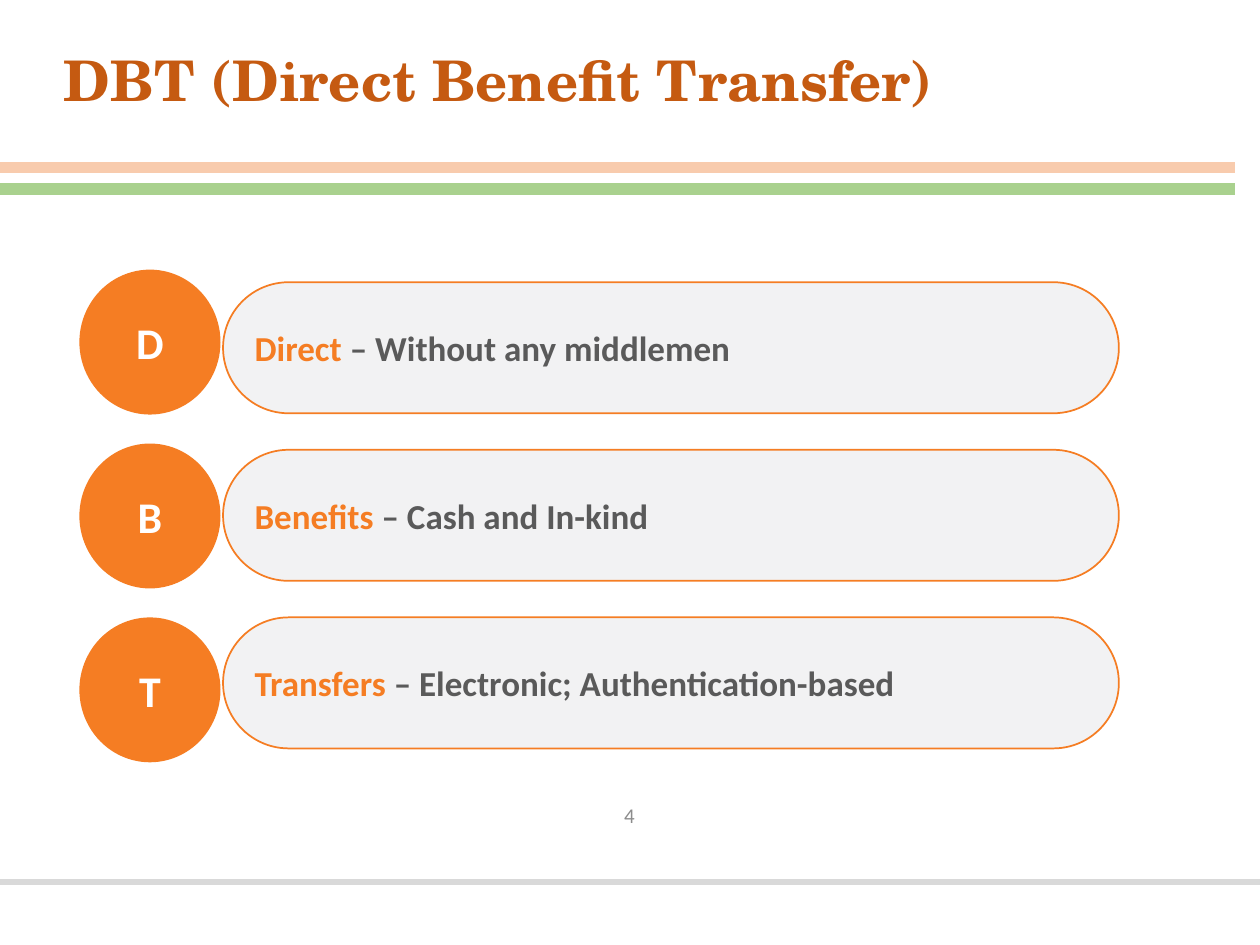
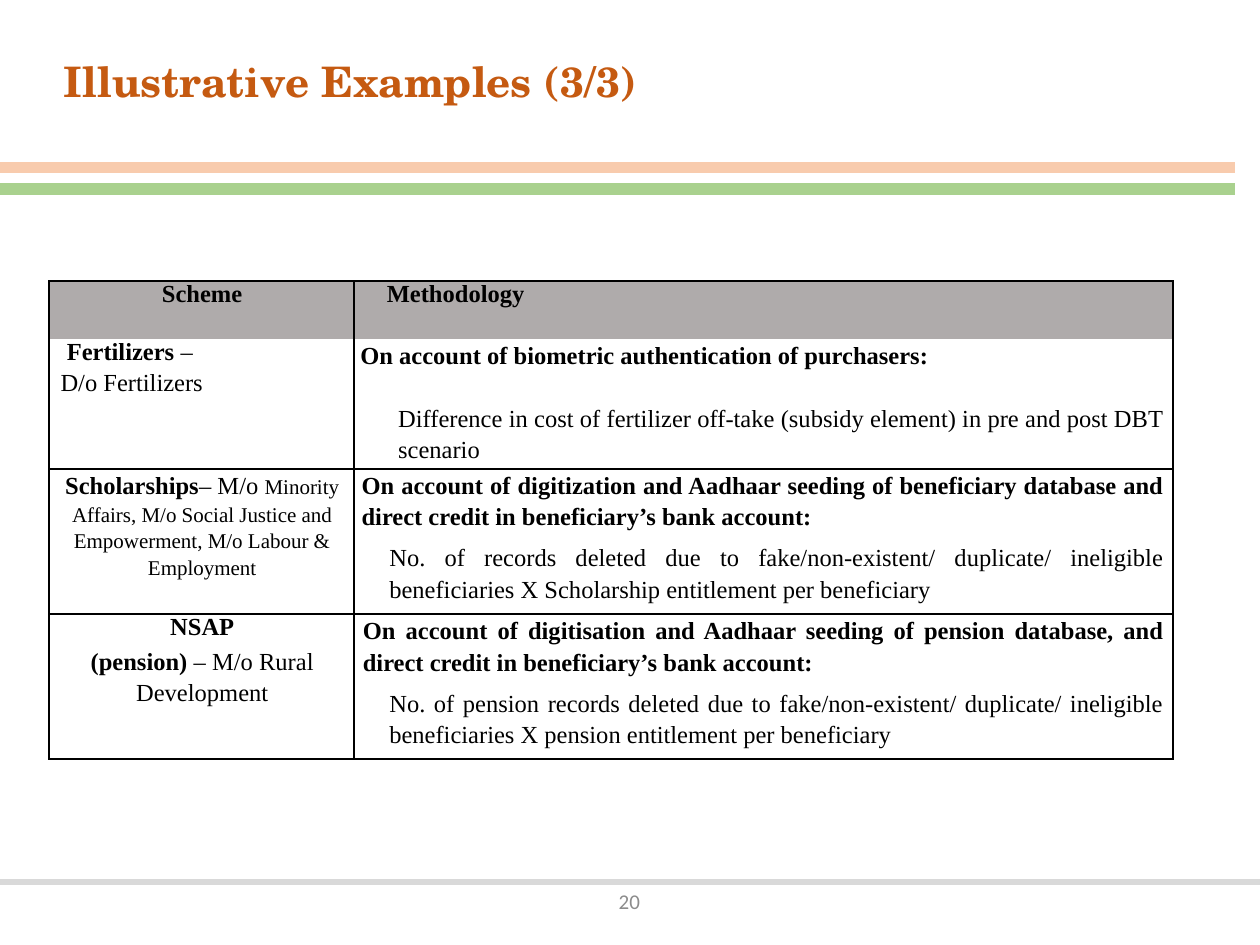
from lxml import etree
from pptx import Presentation
from pptx.dml.color import RGBColor
from pptx.enum.shapes import MSO_CONNECTOR, MSO_SHAPE
from pptx.enum.text import MSO_ANCHOR, PP_ALIGN
from pptx.oxml.ns import qn
from pptx.util import Inches, Pt

LEFT, CENTER, JUSTIFY = PP_ALIGN.LEFT, PP_ALIGN.CENTER, PP_ALIGN.JUSTIFY
MIDDLE = MSO_ANCHOR.MIDDLE
STRAIGHT = MSO_CONNECTOR.STRAIGHT
ELLIPSE, ROUNDED = MSO_SHAPE.OVAL, MSO_SHAPE.ROUNDED_RECTANGLE

PEACH, GREEN, SILVER = "F8CBAD", "A9D18E", "D9D9D9"
RUST, ORANGE, WHITE = "C55A11", "F57D23", "FFFFFF"
PALE, CHARCOAL, GRAY = "E6E7E8", "5A5A5A", "8C8C8C"
BLACK, HEADER_GRAY = "000000", "AFABAB"
TITLE_FONT, BODY_FONT, TABLE_FONT = "TeX Gyre Schola", "Calibri", "Times New Roman"


def color(value):
    return RGBColor.from_string(value)


def style_text(frame, text, font, size, value, bold=False, align=LEFT):
    frame.word_wrap = True
    frame.vertical_anchor = MIDDLE
    para = frame.paragraphs[0]
    para.alignment = align
    para.font.name = font
    para.font.size = Pt(size)
    para.font.bold = bold
    para.font.color.rgb = color(value)
    para.add_run().text = text
    return para


deck = Presentation()
deck.slide_width, deck.slide_height = Inches(10), Inches(7.5)

RULES = [(1.33, 9.8, PEACH, 6.75), (1.5, 9.8, GREEN, 6.75), (7, 10, SILVER, 3)]
PAGES = [
    ("DBT (Direct Benefit Transfer)", 32, "4", 6.27),
    ("Illustrative Examples (3/3)", 24, "20", 6.95),
]
pages = []
for title, title_size, number, number_top in PAGES:
    page = deck.slides.add_slide(deck.slide_layouts[6])
    pages.append(page)
    for top, right, value, width in RULES:
        rule = page.shapes.add_connector(
            STRAIGHT, Inches(0), Inches(top), Inches(right), Inches(top))
        rule.line.color.rgb = color(value)
        rule.line.width = Pt(width)
        etree.SubElement(rule._element.spPr, qn("a:effectLst"))
    box = page.shapes.add_textbox(Inches(0.41), Inches(0.36), Inches(9.24), Inches(0.61))
    para = style_text(box.text_frame, title, TITLE_FONT, title_size, RUST, True)
    para.line_spacing = 0.9
    box = page.shapes.add_textbox(
        Inches(3.87), Inches(number_top), Inches(2.25), Inches(0.4))
    style_text(box.text_frame, number, BODY_FONT, 12, GRAY, align=CENTER)

dbt_page, examples_page = pages

MEANINGS = [
    ("Direct ", "– Without any middlemen"),
    ("Benefits ", "– Cash and In-kind"),
    ("Transfers ", "– Electronic; Authentication-based"),
]
for index, (word, meaning) in enumerate(MEANINGS):
    pill = dbt_page.shapes.add_shape(
        ROUNDED, Inches(1.77), Inches(2.24 + 1.33 * index), Inches(7.11), Inches(1.04))
    pill.adjustments[0] = 0.5
    pill.shadow.inherit = False
    pill.fill.solid()
    pill.fill.fore_color.rgb = color(PALE)
    fill_color = pill._element.spPr.find(qn("a:solidFill"))[0]
    etree.SubElement(fill_color, qn("a:alpha"), val="50000")
    pill.line.color.rgb = color(ORANGE)
    pill.line.width = Pt(1)
    para = style_text(pill.text_frame, word, BODY_FONT, 20, ORANGE, True)
    span = para.add_run()
    span.text = meaning
    span.font.color.rgb = color(CHARCOAL)

    circle = dbt_page.shapes.add_shape(
        ELLIPSE, Inches(0.63), Inches(2.14 + 1.38 * index), Inches(1.12), Inches(1.15))
    circle.shadow.inherit = False
    circle.fill.solid()
    circle.fill.fore_color.rgb = color(ORANGE)
    circle.line.fill.background()
    style_text(circle.text_frame, word[0], BODY_FONT, 25, WHITE, True, CENTER)

SCHEMES = [
    [
        [(CENTER, 0.06, 1, 0, [("Scheme", True, 14)])],
        [(LEFT, 0.26, 1, 0, [("Methodology", True, 14)])],
    ],
    [
        [(LEFT, 0.14, 1, 0, [("Fertilizers ", True, 14), ("–", False, 14)]),
         (LEFT, 0.09, 1, 2, [("D/o Fertilizers", False, 14)])],
        [(LEFT, 0.05, 1.15, 0,
          [("On account of biometric authentication of purchasers:", True, 14)])],
    ],
    [
        [],
        [(JUSTIFY, 0.35, 1.15, 0,
          [("Difference in cost of fertilizer off-take (subsidy element) in pre and "
            "post DBT scenario", False, 14)])],
    ],
    [
        [(CENTER, 0.06, 1.15, 0,
          [("Scholarships", True, 14), ("– M/o ", False, 14),
           ("Minority Affairs, M/o Social Justice and Empowerment, "
            "M/o Labour & Employment", False, 12)])],
        [(JUSTIFY, 0.06, 1.15, 0,
          [("On account of digitization and Aadhaar seeding of beneficiary database "
            "and direct credit in beneficiary’s bank account:", True, 14)]),
         (JUSTIFY, 0.28, 1.15, 5.7,
          [("No. of records deleted due to fake/non-existent/ duplicate/ ineligible "
            "beneficiaries X Scholarship entitlement per beneficiary", False, 14)])],
    ],
    [
        [(CENTER, 0.06, 1, 0, [("NSAP", True, 14)]),
         (CENTER, 0.06, 1.15, 1.8,
          [("(pension) ", True, 14), ("– M/o Rural Development", False, 14)])],
        [(JUSTIFY, 0.07, 1.15, 0,
          [("On account of digitisation and Aadhaar seeding of pension database, and "
            "direct credit in beneficiary’s bank account:", True, 14)]),
         (JUSTIFY, 0.28, 1.15, 5.7,
          [("No. of pension records deleted due to fake/non-existent/ duplicate/ "
            "ineligible beneficiaries X pension entitlement per beneficiary",
            False, 14)])],
    ],
]
COLUMN_WIDTHS = [2.42, 6.5]
RIGHT_MARGINS = [0.05, 0.07]
ROW_HEIGHTS = [0.46, 0.46, 0.49, 1.11, 1.06]
ROW_BORDERS = ["LRT", "LR", "LRB", "LRTB", "LRTB"]

table = examples_page.shapes.add_table(
    len(ROW_HEIGHTS), len(COLUMN_WIDTHS), Inches(0.39), Inches(2.23),
    Inches(sum(COLUMN_WIDTHS)), Inches(sum(ROW_HEIGHTS))).table
table.first_row = table.horz_banding = False
for column, width in zip(table.columns, COLUMN_WIDTHS):
    column.width = Inches(width)
for row, height in zip(table.rows, ROW_HEIGHTS):
    row.height = Inches(height)

for row_index, scheme in enumerate(SCHEMES):
    for column_index, paragraphs in enumerate(scheme):
        cell = table.cell(row_index, column_index)
        cell.margin_right = Inches(RIGHT_MARGINS[column_index])
        cell.margin_left = cell.margin_top = cell.margin_bottom = 0
        properties = cell._tc.get_or_add_tcPr()
        for side in "LRTB":
            border = etree.SubElement(properties, qn(f"a:ln{side}"), w=str(Pt(1)))
            if side in ROW_BORDERS[row_index]:
                paint = etree.SubElement(border, qn("a:solidFill"))
                etree.SubElement(paint, qn("a:srgbClr"), val=BLACK)
            else:
                etree.SubElement(border, qn("a:noFill"))
        if row_index == 0:
            cell.fill.solid()
            cell.fill.fore_color.rgb = color(HEADER_GRAY)
        else:
            cell.fill.background()
        frame = cell.text_frame
        for index, (align, indent, spacing, before, spans) in enumerate(paragraphs):
            para = frame.add_paragraph() if index else frame.paragraphs[0]
            para.alignment = align
            para._p.get_or_add_pPr().set("marL", str(Inches(indent)))
            para.line_spacing = spacing
            if before:
                para.space_before = Pt(before)
            para.font.name = TABLE_FONT
            para.font.size = Pt(14)
            para.font.color.rgb = color(BLACK)
            for text, bold, size in spans:
                span = para.add_run()
                span.text = text
                span.font.bold = bold
                if size != 14:
                    span.font.size = Pt(size)
            etree.SubElement(para._p, qn("a:endParaRPr"), sz="1400")

deck.save("out.pptx")
